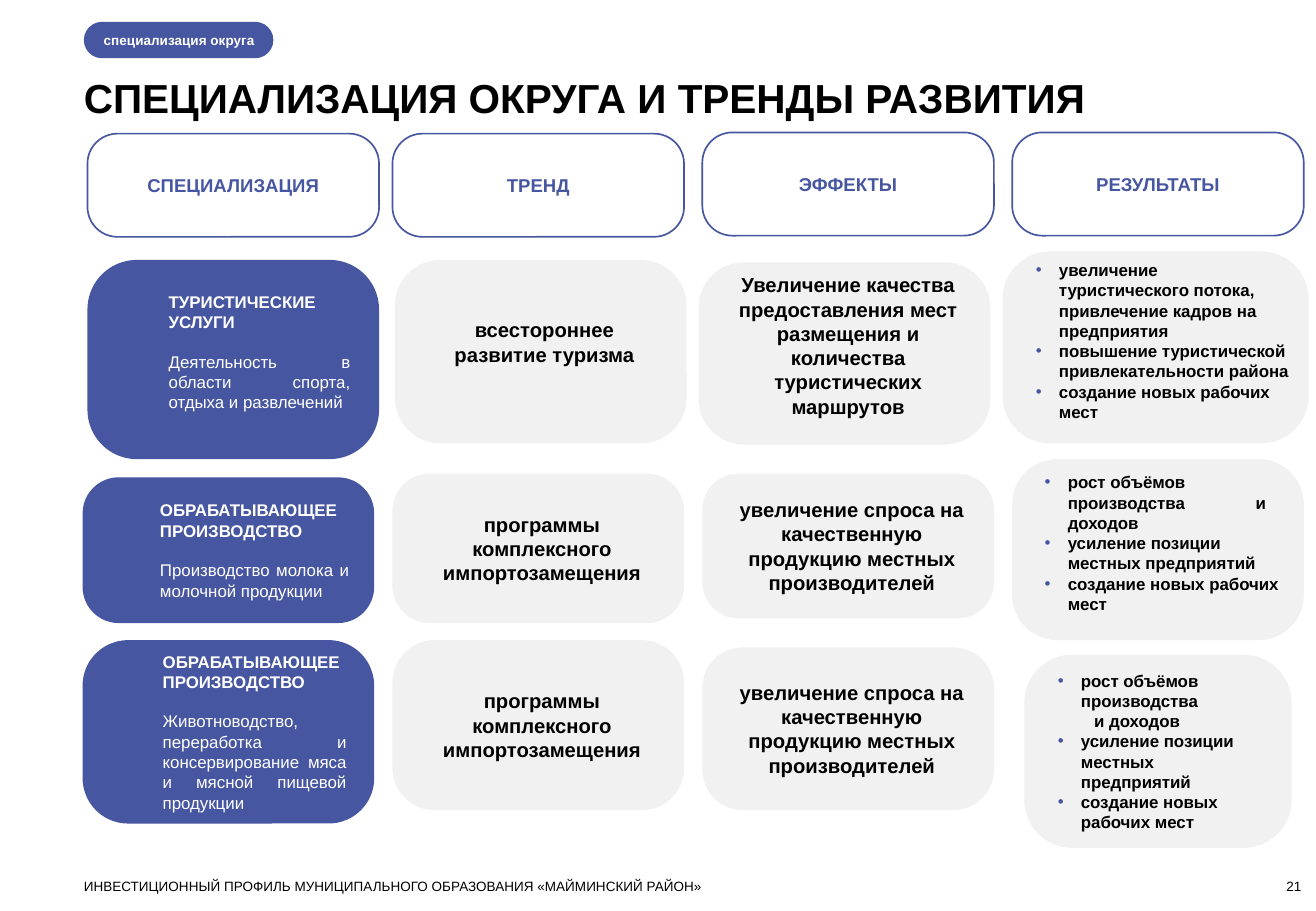
import pptx
import pptx.util
import pptx.dml.color
import pptx.enum.shapes
import pptx.enum.text
import pptx.oxml.ns
from lxml import etree

Inches = pptx.util.Inches
Pt = pptx.util.Pt
ALIGN = pptx.enum.text.PP_ALIGN
ANCHOR = pptx.enum.text.MSO_ANCHOR
COLORS = {"blue": "4756A0", "gray": "F1F1F1", "white": "FFFFFF", "black": "000000"}
INDENT = 0.19

# Column heads: text, left, top
HEADS = [
    ("СПЕЦИАЛИЗАЦИЯ", 0.72, 1.1),
    ("ТРЕНД", 3.23, 1.1),
    ("ЭФФЕКТЫ", 5.78, 1.09),
    ("РЕЗУЛЬТАТЫ", 8.33, 1.09),
]
# Blue cards: box, bottom inset, title, detail
FIELDS = [
    ((0.72, 2.14, 2.4, 1.64), 0.18, "ТУРИСТИЧЕСКИЕ УСЛУГИ",
     "Деятельность в области спорта, отдыха и развлечений"),
    ((0.68, 3.93, 2.4, 1.2), 0.05, "ОБРАБАТЫВАЮЩЕЕ ПРОИЗВОДСТВО",
     "Производство молока и молочной продукции"),
    ((0.68, 5.27, 2.4, 1.51), 0.05, "ОБРАБАТЫВАЮЩЕЕ ПРОИЗВОДСТВО",
     "Животноводство, переработка и консервирование мяса и мясной пищевой продукции"),
]
# Gray cards with one statement: box, bottom inset, text
TREND = "программы комплексного импортозамещения"
EFFECT = "увеличение спроса на качественную продукцию местных производителей"
CLAIMS = [
    ((3.25, 2.14, 2.4, 1.51), 0.21, "всестороннее развитие туризма"),
    ((3.23, 3.9, 2.4, 1.23), 0.05, TREND),
    ((3.23, 5.27, 2.4, 1.4), 0.05, TREND),
    ((5.75, 2.16, 2.4, 1.5), 0.18,
     "Увеличение качества предоставления мест размещения и количества туристических маршрутов"),
    ((5.78, 3.9, 2.4, 1.19), 0.05, EFFECT),
    ((5.78, 5.33, 2.4, 1.34), 0.05, EFFECT),
]
# Gray cards with results: box, right inset, bottom inset, items (text, bullet)
JOBS = ("создание новых рабочих мест", True)
FIRMS = ("усиление позиции местных предприятий", True)
RESULTS = [
    ((8.25, 2.07, 2.52, 1.58), 0.05, 0.16, [
        ("увеличение туристического потока, привлечение кадров на предприятия", True),
        ("повышение туристической привлекательности района", True), JOBS]),
    ((8.33, 3.78, 2.4, 1.49), 0.1, 0.16, [
        ("рост объёмов производства\tи доходов", True), FIRMS, JOBS]),
    ((8.43, 5.39, 2.2, 1.59), 0.1, 0.05, [
        ("рост объёмов производства", True), ("и доходов", False), FIRMS, JOBS]),
]


def color(name):
    return pptx.dml.color.RGBColor.from_string(COLORS[name])


def node(parent, tag, **attrs):
    item = etree.SubElement(parent, pptx.oxml.ns.qn("a:" + tag))
    for key, value in attrs.items():
        item.set(key, str(value))
    return item


def setup(frame, insets, anchor):
    frame.word_wrap = True
    frame.vertical_anchor = anchor
    left, top, right, bottom = map(Inches, insets)
    frame.margin_left, frame.margin_top = left, top
    frame.margin_right, frame.margin_bottom = right, bottom


def write(frame, text, size=10, ink="black", bold=False, align=ALIGN.LEFT,
          before=0, indent=0, bullet=False):
    para = frame.paragraphs[0]
    if para.runs:
        para = frame.add_paragraph()
    para.alignment = align
    props = para._p.get_or_add_pPr()
    if indent:
        props.set("marL", str(Inches(indent)))
        props.set("indent", str(Inches(-indent if bullet else 0)))
    if bullet:
        node(node(props, "buClr"), "srgbClr", val=COLORS["blue"])
        node(props, "buFont", typeface="Arial")
        node(props, "buChar", char="•")
    if "\t" in text:
        node(node(props, "tabLst"), "tab", pos=Inches(1.81), algn="l")
    if before:
        para.space_before = Pt(before)
    run = para.add_run()
    run.text = text
    font = run.font
    font.name, font.size, font.bold = "Arial", Pt(size), bold
    font.color.rgb = color(ink)


def card(slide, box, insets, fill=None, adj=0.248):
    kind = pptx.enum.shapes.MSO_SHAPE.ROUNDED_RECTANGLE
    shape = slide.shapes.add_shape(kind, *map(Inches, box))
    shape.adjustments[0] = adj
    shape.shadow.inherit = False
    if fill:
        shape.fill.solid()
        shape.fill.fore_color.rgb = color(fill)
        shape.line.fill.background()
    else:
        shape.fill.background()
        shape.line.color.rgb = color("blue")
        shape.line.width = Pt(1)
    setup(shape.text_frame, insets, ANCHOR.MIDDLE)
    return shape.text_frame


def label(slide, box, text, anchor=ANCHOR.TOP, **style):
    frame = slide.shapes.add_textbox(*map(Inches, box)).text_frame
    setup(frame, (0, 0, 0, 0), anchor)
    write(frame, text, **style)


def main():
    deck = pptx.Presentation()
    deck.slide_width, deck.slide_height = Inches(10.83), Inches(7.5)
    slide = deck.slides.add_slide(deck.slide_layouts[6])

    # Section tag and title
    tag = card(slide, (0.69, 0.18, 1.56, 0.3), (0.12, 0, 0, 0), "blue", 0.5)
    write(tag, "специализация округа", size=8, ink="white", bold=True)
    label(slide, (0.69, 0.6, 10.02, 0.4), "СПЕЦИАЛИЗАЦИЯ ОКРУГА И ТРЕНДЫ РАЗВИТИЯ",
          size=24, bold=True)

    # Column heads
    for text, left, top in HEADS:
        frame = card(slide, (left, top, 2.4, 0.85), (0.1, 0.05, 0.1, 0.05), adj=0.291)
        write(frame, text, size=11, ink="blue", bold=True, align=ALIGN.CENTER)

    # Specialization
    for box, bottom, title, detail in FIELDS:
        frame = card(slide, box, (0.55, 0.05, 0.12, bottom), "blue")
        write(frame, title, ink="white", bold=True, align=ALIGN.JUSTIFY)
        write(frame, detail, ink="white", align=ALIGN.JUSTIFY, before=11.5)

    # Trends and effects
    for box, bottom, text in CLAIMS:
        frame = card(slide, box, (0.16, 0.05, 0.1, bottom), "gray")
        write(frame, text, size=12, bold=True, align=ALIGN.CENTER)

    # Results
    for box, right, bottom, items in RESULTS:
        frame = card(slide, box, (0.16, 0.05, right, bottom), "gray")
        for text, bullet in items:
            write(frame, text, bold=True, bullet=bullet,
                  indent=INDENT if bullet else 0.3)

    # Footer
    label(slide, (0.69, 7.23, 8, 0.27),
          "ИНВЕСТИЦИОННЫЙ ПРОФИЛЬ МУНИЦИПАЛЬНОГО ОБРАЗОВАНИЯ «МАЙМИНСКИЙ РАЙОН»", size=8)
    label(slide, (9.91, 7.23, 0.8, 0.13), "21", anchor=ANCHOR.BOTTOM,
          size=8, align=ALIGN.RIGHT)

    deck.save("out.pptx")


if __name__ == "__main__":
    main()
